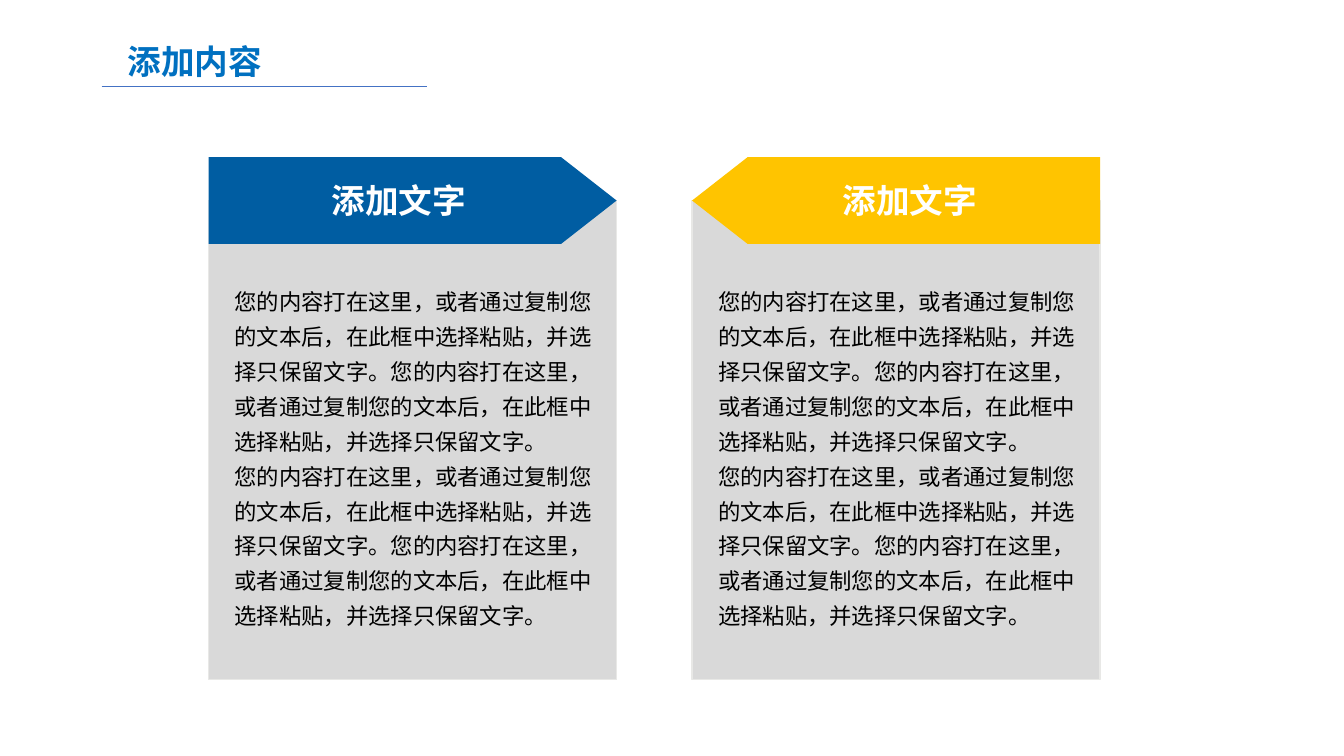
from pptx import Presentation
from pptx.dml.color import RGBColor
from pptx.enum.shapes import MSO_CONNECTOR, MSO_SHAPE
from pptx.enum.text import MSO_ANCHOR, MSO_AUTO_SIZE, PP_ALIGN
from pptx.oxml.ns import qn
from pptx.util import Inches, Pt
from lxml.etree import SubElement

SENTENCE = "您的内容打在这里，或者通过复制您的文本后，在此框中选择粘贴，并选择只保留文字。"


def rgb(value):
    return RGBColor.from_string(value)


class Deck:
    """Holds the style and the current slide, and draws each kind of element."""

    font = "Noto Sans CJK SC"
    panel, panel_edge = "D9D9D9", "E8E8E6"

    def __init__(self, width, height):
        self.prs = Presentation()
        self.prs.slide_width, self.prs.slide_height = Inches(width), Inches(height)
        self.slide = self.prs.slides.add_slide(self.prs.slide_layouts[5])

    def set_text(self, sp, paragraphs, size, color, bold=False, align=PP_ALIGN.LEFT,
                 anchor=MSO_ANCHOR.TOP, wrap=True, spacing=1.0):
        tf = sp.text_frame
        tf.text = "\n".join(paragraphs)
        tf.word_wrap = wrap
        tf.vertical_anchor = anchor
        for p in tf.paragraphs:
            p.alignment = align
            p.line_spacing = spacing
            p.space_before = Pt(0)
            p.font.size, p.font.bold = Pt(size), bold
            p.font.color.rgb = rgb(color)
            p.font.name = self.font
            SubElement(p.font._element, qn("a:ea"), typeface=self.font)

    def title(self, text, x, y, w, h):
        sp = self.slide.shapes.title
        sp.left, sp.top, sp.width, sp.height = map(Inches, (x, y, w, h))
        self.set_text(sp, [text], 24, "0070C0", bold=True, align=PP_ALIGN.CENTER, wrap=False)
        sp.text_frame.auto_size = MSO_AUTO_SIZE.SHAPE_TO_FIT_TEXT

    def line(self, x1, y1, x2, y2, color, width):
        cn = self.slide.shapes.add_connector(
            MSO_CONNECTOR.STRAIGHT, *map(Inches, (x1, y1, x2, y2)))
        cn.line.color.rgb, cn.line.width = rgb(color), Pt(width)
        SubElement(cn._element.spPr, qn("a:effectLst"))

    def shape(self, kind, x, y, w, h, fill, edge=None):
        sp = self.slide.shapes.add_shape(kind, *map(Inches, (x, y, w, h)))
        sp.shadow.inherit = False
        sp.fill.solid()
        sp.fill.fore_color.rgb = rgb(fill)
        if edge:
            sp.line.color.rgb, sp.line.width = rgb(edge), Pt(1)
        else:
            sp.line.fill.background()
        return sp

    def banner(self, text, x, y, w, h, fill, flip):
        sp = self.shape(MSO_SHAPE.PENTAGON, x, y, w, h, fill)
        sp.adjustments[0] = 0.64
        if flip:
            sp._element.spPr.xfrm.set("flipH", "1")
        self.set_text(sp, [text], 24, "FFFFFF", bold=True, align=PP_ALIGN.CENTER,
                      anchor=MSO_ANCHOR.MIDDLE, wrap=False)

    def body(self, paragraphs, x, y, w, h):
        sp = self.slide.shapes.add_textbox(*map(Inches, (x, y, w, h)))
        self.set_text(sp, paragraphs, 16, "000000", spacing=1.3)
        sp.text_frame.auto_size = MSO_AUTO_SIZE.SHAPE_TO_FIT_TEXT

    def card(self, heading, paragraphs, x, fill, flip):
        self.shape(MSO_SHAPE.RECTANGLE, x, 1.99, 4.05, 4.75, self.panel, self.panel_edge)
        self.banner(heading, x, 1.56, 4.05, 0.86, fill, flip)
        self.body(paragraphs, x + 0.16, 2.73, 3.89, 3.6)


def main():
    deck = Deck(13.34, 7.5)
    deck.line(1.01, 0.86, 4.24, 0.86, "4472C4", 0.5)
    deck.title("添加内容", 1.16, 0.36, 1.55, 0.5)
    for x, fill, flip in ((2.07, "005DA2", False), (6.87, "FFC400", True)):
        deck.card("添加文字", [SENTENCE * 2] * 2, x, fill, flip)
    deck.prs.save("out.pptx")


if __name__ == "__main__":
    main()
